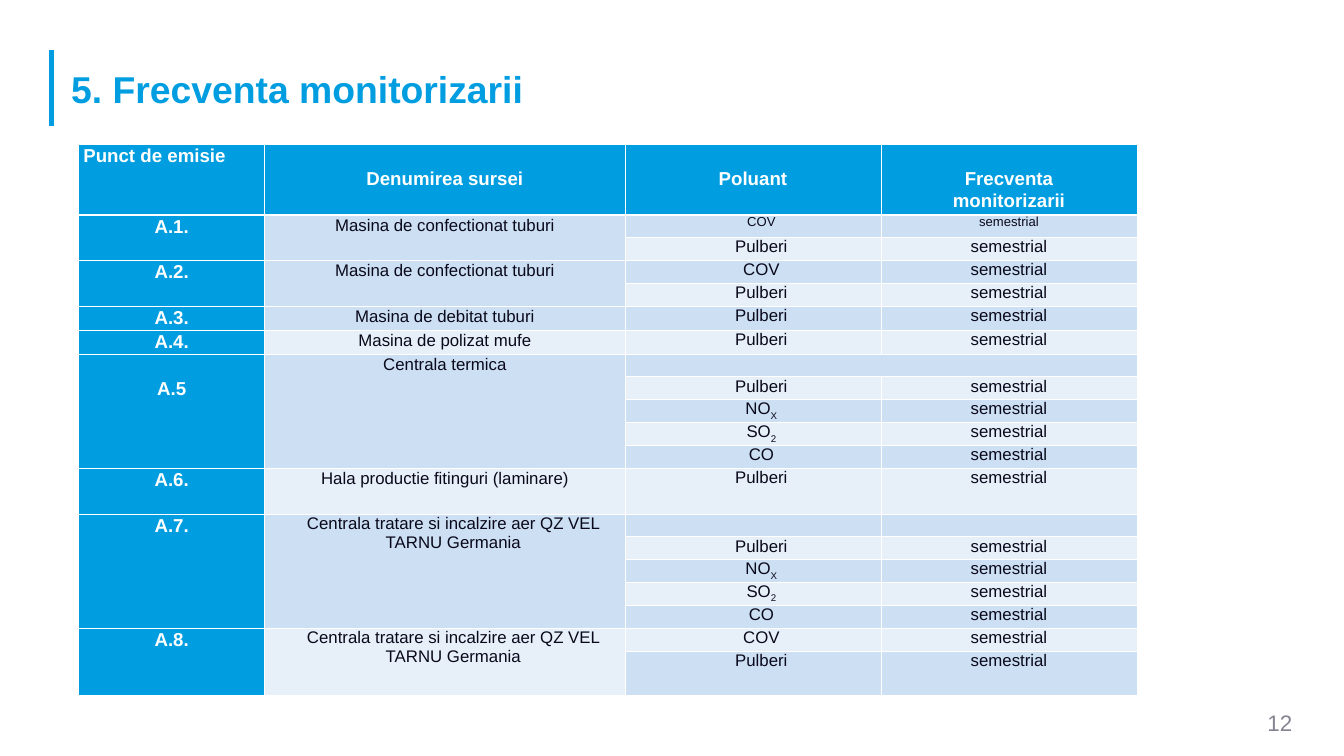
from dataclasses import dataclass

from lxml.etree import SubElement
from pptx import Presentation
from pptx.dml.color import RGBColor
from pptx.enum.shapes import MSO_CONNECTOR
from pptx.enum.text import MSO_ANCHOR, PP_ALIGN as Align
from pptx.oxml.ns import qn
from pptx.util import Inches, Pt


@dataclass(frozen=True)
class Theme:
    font: str = "Arial"
    blue: str = "009EE0"
    bands: tuple = ("E7F0F9", "CCDFF3")  # even rows, odd rows
    white: str = "FFFFFF"
    ink: str = "0A091B"
    grey: str = "858591"
    title: int = 40
    page_number: int = 24
    heading: int = 20
    body: int = 18
    small: int = 14


theme = Theme()
deck = Presentation()
deck.slide_width, deck.slide_height = Inches(20), Inches(11.25)
X, Y = deck.slide_width / 100, deck.slide_height / 100  # one percent of the slide


def write(frame, text, size, color, bold=False, align=Align.CENTER, spacing=None, indent=0):
    """Fill a text frame: a newline starts a paragraph, an underscore a subscript."""
    for number, line in enumerate(text.split("\n")):
        para = frame.add_paragraph() if number else frame.paragraphs[0]
        para.alignment = align
        para.line_spacing = spacing
        if indent:
            para._p.get_or_add_pPr().set("marL", str(Inches(indent)))
        for part, piece in enumerate(line.split("_")):
            span = para.add_run()
            span.text = piece
            span.font.name, span.font.size, span.font.bold = theme.font, Pt(size), bold
            span.font.color.rgb = RGBColor.from_string(color)
            if part:
                span._r.get_or_add_rPr().set("baseline", "-25000")


def style_cell(cell, fill, bottom_width=1):
    """Give a cell white borders, tight margins and a solid fill."""
    cell.margin_left = cell.margin_right = Inches(0.07)
    cell.margin_top = cell.margin_bottom = 0
    properties = cell._tc.get_or_add_tcPr()
    for side in "LRTB":
        width = bottom_width if side == "B" else 1
        border = SubElement(properties, qn(f"a:ln{side}"), w=str(Pt(width)))
        SubElement(SubElement(border, qn("a:solidFill")), qn("a:srgbClr"), val=theme.white)
    cell.fill.solid()
    cell.fill.fore_color.rgb = RGBColor.from_string(fill)


page = deck.slides.add_slide(deck.slide_layouts[5])

# Title with its accent bar
bar = page.shapes.add_connector(
    MSO_CONNECTOR.STRAIGHT, int(3.85 * X), int(6.67 * Y), int(3.85 * X), int(16.7 * Y))
bar.line.color.rgb = RGBColor.from_string(theme.blue)
bar.line.width = Pt(5)
SubElement(bar._element.spPr, qn("a:effectLst"))

title = page.shapes.title
title.left, title.top = int(4.8 * X), int(8.9 * Y)
title.width, title.height = int(41.45 * X), int(6.3 * Y)
title.text_frame.vertical_anchor = MSO_ANCHOR.MIDDLE
write(title.text_frame, "5. Frecventa monitorizarii", theme.title, theme.blue,
      bold=True, align=Align.LEFT, spacing=0.9)

# Page number
number_box = page.shapes.add_textbox(int(90.4 * X), int(93.4 * Y), int(6.25 * X), int(4.45 * Y))
number_box.text_frame.word_wrap = True
write(number_box.text_frame, "12", theme.page_number, theme.grey, align=Align.RIGHT)

# Monitoring table: emission point, source, pollutants ("" leaves the row empty)
headers = ["Punct de emisie", "Denumirea sursei", "Poluant", "Frecventa\nmonitorizarii"]
pipe_machine = "Masina de confectionat tuburi"
air_heating = "Centrala tratare si incalzire aer QZ VEL TARNU Germania"
combustion = ["", "Pulberi", "NO_X", "SO_2", "CO"]
emissions = [
    ("A.1.", pipe_machine, ["COV", "Pulberi"]),
    ("A.2.", pipe_machine, ["COV", "Pulberi"]),
    ("A.3.", "Masina de debitat tuburi", ["Pulberi"]),
    ("A.4.", "Masina de polizat mufe", ["Pulberi"]),
    ("A.5", "Centrala termica", combustion),
    ("A.6.", "Hala productie fitinguri (laminare)", ["Pulberi"]),
    ("A.7.", air_heating, combustion),
    ("A.8.", air_heating, ["COV", "Pulberi"]),
]
column_shares = [13.85, 26.8, 19.05, 19.05]
row_share, header_share = 3.02, 9.16
row_count = 1 + sum(len(pollutants) for _, _, pollutants in emissions)
tall_rows = {12: 2, row_count - 1: 1.95}
row_shares = [header_share] + [row_share * tall_rows.get(row, 1) for row in range(1, row_count)]

table = page.shapes.add_table(
    row_count, len(headers), int(5.85 * X), int(19.05 * Y),
    int(sum(column_shares) * X), int(sum(row_shares) * Y)).table
for column, share in zip(table.columns, column_shares):
    column.width = int(share * X)
for row, share in zip(table.rows, row_shares):
    row.height = int(share * Y)

for row in range(row_count):
    for column in range(len(headers)):
        is_blue = row == 0 or column == 0
        style_cell(table.cell(row, column), theme.blue if is_blue else theme.bands[row % 2],
                   bottom_width=1 if row else 3)

one_line = Inches(0.34)
heading = dict(size=theme.heading, color=theme.white, bold=True, spacing=1.07)
for column, text in enumerate(headers):
    cell = table.cell(0, column)
    cell.margin_top = one_line if column else 0
    write(cell.text_frame, text, align=Align.CENTER if column else Align.LEFT, **heading)

row = 1
for point, source, pollutants in emissions:
    last = row + len(pollutants) - 1
    if last > row:
        for column in (0, 1):
            table.cell(row, column).merge(table.cell(last, column))
    point_cell = table.cell(row, 0)
    write(point_cell.text_frame, point, **heading)
    source_format = dict(indent=0.25) if source == air_heating else dict(spacing=1.07)
    write(table.cell(row, 1).text_frame, source, theme.body, theme.ink, **source_format)
    if point == "A.5":
        point_cell.margin_top = one_line
        table.cell(row, 2).merge(table.cell(row, 3))
    for pollutant in pollutants:
        if pollutant:
            size = theme.small if row == 1 else theme.body
            write(table.cell(row, 2).text_frame, pollutant, size, theme.ink, indent=0.25)
            write(table.cell(row, 3).text_frame, "semestrial", size, theme.ink)
        row += 1

deck.save("out.pptx")
